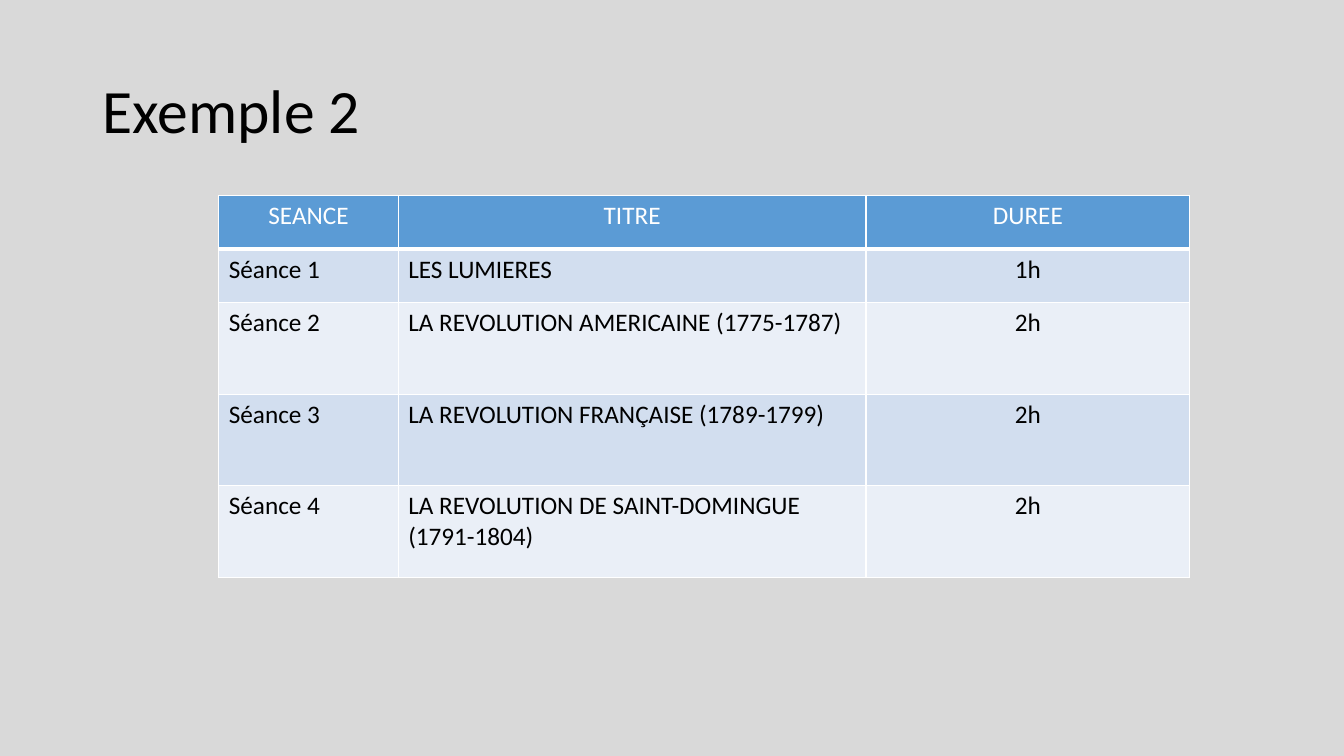
from lxml import etree
from pptx import Presentation
from pptx.dml.color import RGBColor
from pptx.enum.text import MSO_ANCHOR as Anchor, PP_ALIGN as Align
from pptx.oxml import parse_xml
from pptx.util import Inches, Pt

NS = "http://schemas.openxmlformats.org/drawingml/2006/main"
HEAD = ("SEANCE", "TITRE", "DUREE")
ROWS = [
    ("Séance 1", "LES LUMIERES", "1h"),
    ("Séance 2", "LA REVOLUTION AMERICAINE (1775-1787)", "2h"),
    ("Séance 3", "LA REVOLUTION FRANÇAISE (1789-1799)", "2h"),
    ("Séance 4", "LA REVOLUTION DE SAINT-DOMINGUE (1791-1804)", "2h"),
]
WIDTHS = (1.78, 4.64, 3.21)
HEIGHTS = (0.53, 0.53, 0.91, 0.91, 0.91)


def color(code):
    return RGBColor.from_string(code)


def style(para, size, code, align=Align.LEFT):
    para.alignment = align
    form = {"name": "Calibri", "size": Pt(size), "bold": False}
    for key, value in form.items():
        setattr(para.font, key, value)
    para.font.color.rgb = color(code)


def paint(cell, code, base):
    """Fill a cell and give it white borders, the lower one base points wide."""
    cell.fill.solid()
    cell.fill.fore_color.rgb = color(code)
    props = cell._tc.get_or_add_tcPr()
    sides = {"lnL": 1, "lnR": 1, "lnT": 1, "lnB": base}
    for spot, (side, width) in enumerate(sides.items()):
        line = parse_xml(
            f'<a:{side} xmlns:a="{NS}" w="{Pt(width)}"><a:solidFill>'
            f'<a:srgbClr val="FFFFFF"/></a:solidFill></a:{side}>')
        props.insert(spot, line)


def title(slide, text, box):
    frame = slide.shapes.add_textbox(*map(Inches, box)).text_frame
    frame.word_wrap = True
    frame.vertical_anchor = Anchor.MIDDLE
    para = frame.paragraphs[0]
    para.text = text
    para.line_spacing = 0.9
    style(para, 44, "000000")


def plan(slide, box):
    """Place the table of sessions."""
    rows = [HEAD, *ROWS]
    shape = slide.shapes.add_table(len(rows), len(HEAD), *map(Inches, box))
    table = shape.table
    for col, width in zip(table.columns, WIDTHS):
        col.width = Inches(width)
    for i, (row, high) in enumerate(zip(rows, HEIGHTS)):
        table.rows[i].height = Inches(high)
        band = "5B9BD5" if i == 0 else ("EAEFF7", "D2DEEF")[i % 2]
        for j, text in enumerate(row):
            cell = table.cell(i, j)
            cell.text = text
            mid = i == 0 or j == 2
            style(cell.text_frame.paragraphs[0], 18,
                  "000000" if i else "FFFFFF",
                  Align.CENTER if mid else Align.LEFT)
            paint(cell, band, 1 if i else 3)


def main():
    deck = Presentation()
    deck.slide_width, deck.slide_height = Inches(13.33), Inches(7.5)
    slide = deck.slides.add_slide(deck.slide_layouts[6])
    # Background
    back = slide.background.fill
    back.solid()
    back.fore_color.rgb = color("D9D9D9")
    # Content
    title(slide, "Exemple 2", (0.92, 0.4, 11.5, 1.45))
    plan(slide, (2.17, 1.94, sum(WIDTHS), sum(HEIGHTS)))
    deck.save("out.pptx")


if __name__ == "__main__":
    main()
